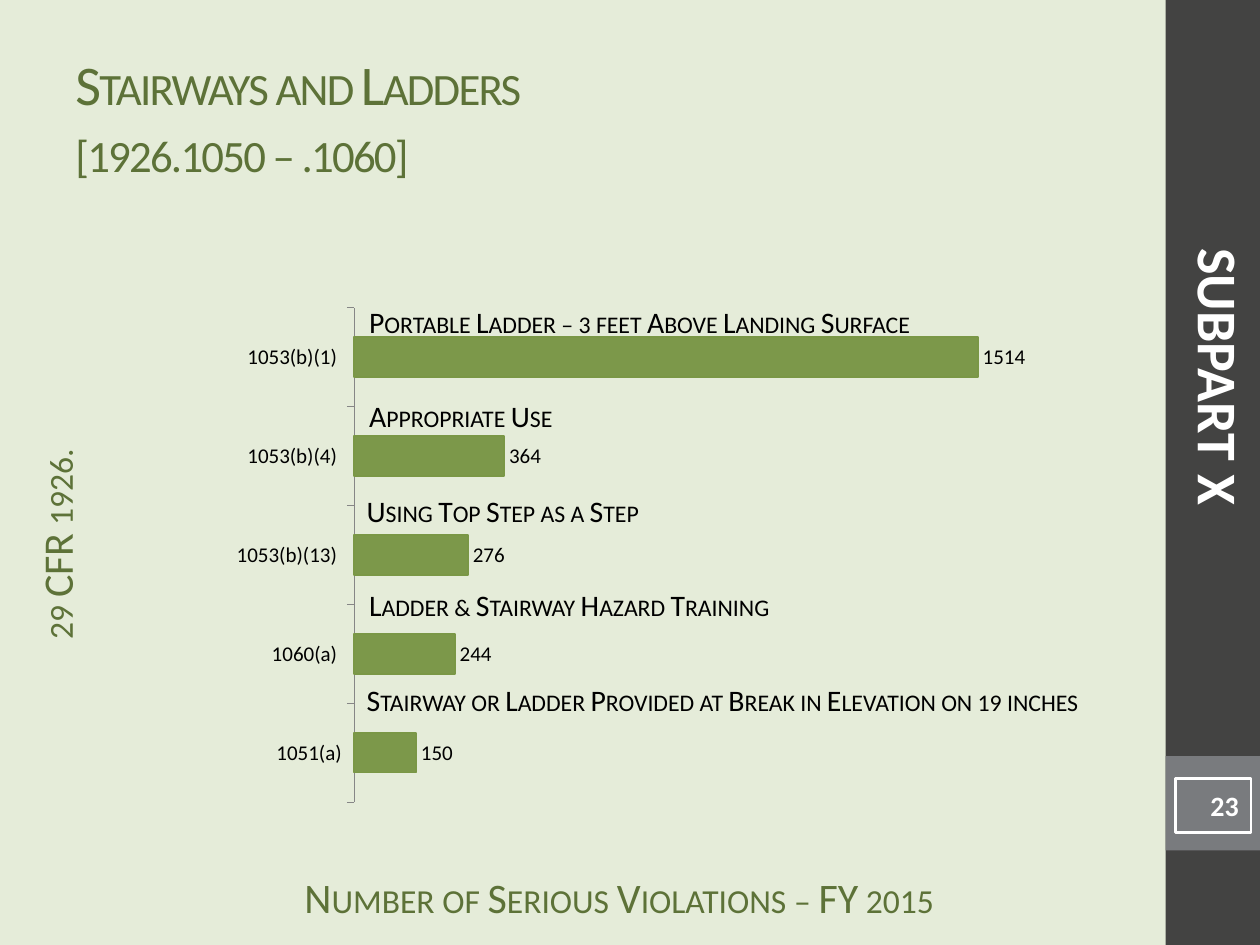
from lxml import etree
from pptx import Presentation
from pptx.chart.data import CategoryChartData
from pptx.dml.color import RGBColor
from pptx.enum.chart import XL_CHART_TYPE as Chart, XL_LABEL_POSITION as LabelPos, XL_TICK_MARK as Tick
from pptx.enum.shapes import MSO_SHAPE as Shape
from pptx.enum.text import MSO_ANCHOR as Anchor, PP_ALIGN as Align
from pptx.oxml.ns import qn
from pptx.util import Inches, Pt

FONT = "Calibri"
PALE = RGBColor(0xE5, 0xEC, 0xD9)
OLIVE = RGBColor(0x5D, 0x72, 0x38)
GREEN = RGBColor(0x7C, 0x98, 0x4A)
BAR_EDGE = RGBColor(0x7A, 0x97, 0x46)
AXIS = RGBColor(0x86, 0x86, 0x86)
CHARCOAL = RGBColor(0x43, 0x43, 0x42)
GRAY = RGBColor(0x79, 0x7B, 0x7E)
WHITE = RGBColor(0xFF, 0xFF, 0xFF)
BLACK = RGBColor(0, 0, 0)

VIOLATIONS = [
    ("1051(a)", 150),
    ("1060(a) ", 244),
    ("1053(b)(13) ", 276),
    ("1053(b)(4) ", 364),
    ("1053(b)(1) ", 1514),
]
CAPTIONS = [
    ("Portable Ladder – 3 feet Above Landing Surface", 2.93, 4.57),
    ("Appropriate Use", 2.93, 1.48),
    ("Using Top Step as a Step", 2.91, 3.09),
    ("Ladder & Stairway Hazard Training", 2.93, 3.3),
    ("Stairway or Ladder Provided at Break in Elevation on 19 inches", 2.91, 6.34),
]


def add_run(p, text, size, color, bold=False, small=False, spacing=None):
    """Add one formatted run to a paragraph."""
    r = p.add_run()
    r.text = text
    r.font.name, r.font.size, r.font.bold = FONT, Pt(size), bold
    r.font.color.rgb = color
    if small:
        r.font._element.set("cap", "small")
    if spacing is not None:
        r.font._element.set("spc", str(spacing * 100))


def add_text(s, box, lines, size, color, align=Align.LEFT, anchor=Anchor.TOP,
             margins=(0.1, 0.05, 0.1, 0.05), rotation=0, **style):
    """Place a text box whose lines are parted by line breaks."""
    sp = s.shapes.add_textbox(*map(Inches, box))
    sp.rotation = rotation
    tf = sp.text_frame
    tf.word_wrap = True
    tf.vertical_anchor = anchor
    tf.margin_left, tf.margin_top, tf.margin_right, tf.margin_bottom = map(Inches, margins)
    p = tf.paragraphs[0]
    p.alignment = align
    for i, line in enumerate(lines):
        if i:
            p.add_line_break()
        add_run(p, line, size, color, **style)


def add_rect(s, box, fill=None, line=None):
    """Place a rectangle with an optional fill and outline."""
    sp = s.shapes.add_shape(Shape.RECTANGLE, *map(Inches, box))
    sp.shadow.inherit = False
    if fill is None:
        sp.fill.background()
    else:
        sp.fill.solid()
        sp.fill.fore_color.rgb = fill
    if line is None:
        sp.line.fill.background()
    else:
        sp.line.color.rgb = line
        sp.line.width = Pt(1.5)
    return sp


def add_sidebar(s, x, y, w, h):
    """Draw the side band with the subpart name and the slide number."""
    add_rect(s, (x, y, w, h), CHARCOAL)
    add_rect(s, (x, y + 6, w, w), GRAY)
    sp = add_rect(s, (x + 0.08, y + 6.18, 0.6, 0.43), line=WHITE)
    tf = sp.text_frame
    tf.vertical_anchor = Anchor.MIDDLE
    p = tf.paragraphs[0]
    p.alignment = Align.RIGHT
    add_run(p, "23", 16, WHITE, bold=True)
    add_text(s, (x - 2.56, y + 2.67, 5.98, 0.64), ["SUBPART X"], 32, WHITE,
             Align.CENTER, rotation=90, bold=True)


def add_violations_chart(s, x, y, w, h):
    """Draw the bar chart of serious violations."""
    data = CategoryChartData()
    data.categories = [name for name, _ in VIOLATIONS]
    data.add_series("Series 1", [value for _, value in VIOLATIONS])
    chart = s.shapes.add_chart(Chart.BAR_CLUSTERED, *map(Inches, (x, y, w, h)), data).chart
    chart.has_legend = False
    chart.has_title = False
    chart.font.name, chart.font.size = FONT, Pt(10)
    chart.font.color.rgb = BLACK

    chart.value_axis.visible = False
    chart.value_axis.has_major_gridlines = False
    axis = chart.category_axis
    axis.major_tick_mark = Tick.OUTSIDE
    axis.tick_labels.font.size = Pt(12)
    axis.format.line.color.rgb = AXIS

    plot = chart.plots[0]
    plot.gap_width = 150
    plot.vary_by_categories = False
    bars = plot.series[0].format
    bars.fill.solid()
    bars.fill.fore_color.rgb = GREEN
    bars.line.color.rgb = BAR_EDGE
    bars.line.width = Pt(1)
    plot.has_data_labels = True
    labels = plot.data_labels
    labels.show_value = True
    labels.position = LabelPos.OUTSIDE_END
    labels.font.size = Pt(12)


def add_captions(s, top, pitch):
    """Set one caption above each bar at an equal pitch."""
    for i, (text, left, width) in enumerate(CAPTIONS):
        add_text(s, (left, top + i * pitch, width, 0.29), [text], 17, BLACK,
                 margins=(0, 0, 0, 0), small=True)


def add_axis_titles(s):
    """Name the two axes below and beside the chart."""
    for box, text, rotation in [
        ((2.08, 6.92, 5.67, 0.33), "Number of Serious Violations – FY 2015", 0),
        ((-1.56, 4.03, 4.19, 0.58), "29 CFR 1926.", 270),
    ]:
        add_text(s, box, [text], 24, OLIVE, Align.CENTER,
                 margins=(0.1, 0, 0.1, 0.05), rotation=rotation, small=True)


def main():
    """Build the slide and save it."""
    prs = Presentation()
    prs.slide_width, prs.slide_height = Inches(10), Inches(7.5)
    s = prs.slides.add_slide(prs.slide_layouts[6])
    s.background.fill.solid()
    s.background.fill.fore_color.rgb = PALE
    add_sidebar(s, 9.25, 0, 0.75, 7.5)
    add_axis_titles(s)
    add_violations_chart(s, 1.75, 2.36, 6.42, 4.09)
    add_text(s, (0.5, 0.3, 8.33, 1.25), ["Stairways and Ladders", "[1926.1050 – .1060]"],
             32, OLIVE, anchor=Anchor.MIDDLE, small=True, spacing=-1)
    add_captions(s, 2.41, 0.75)
    prs.save("out.pptx")


if __name__ == "__main__":
    main()
